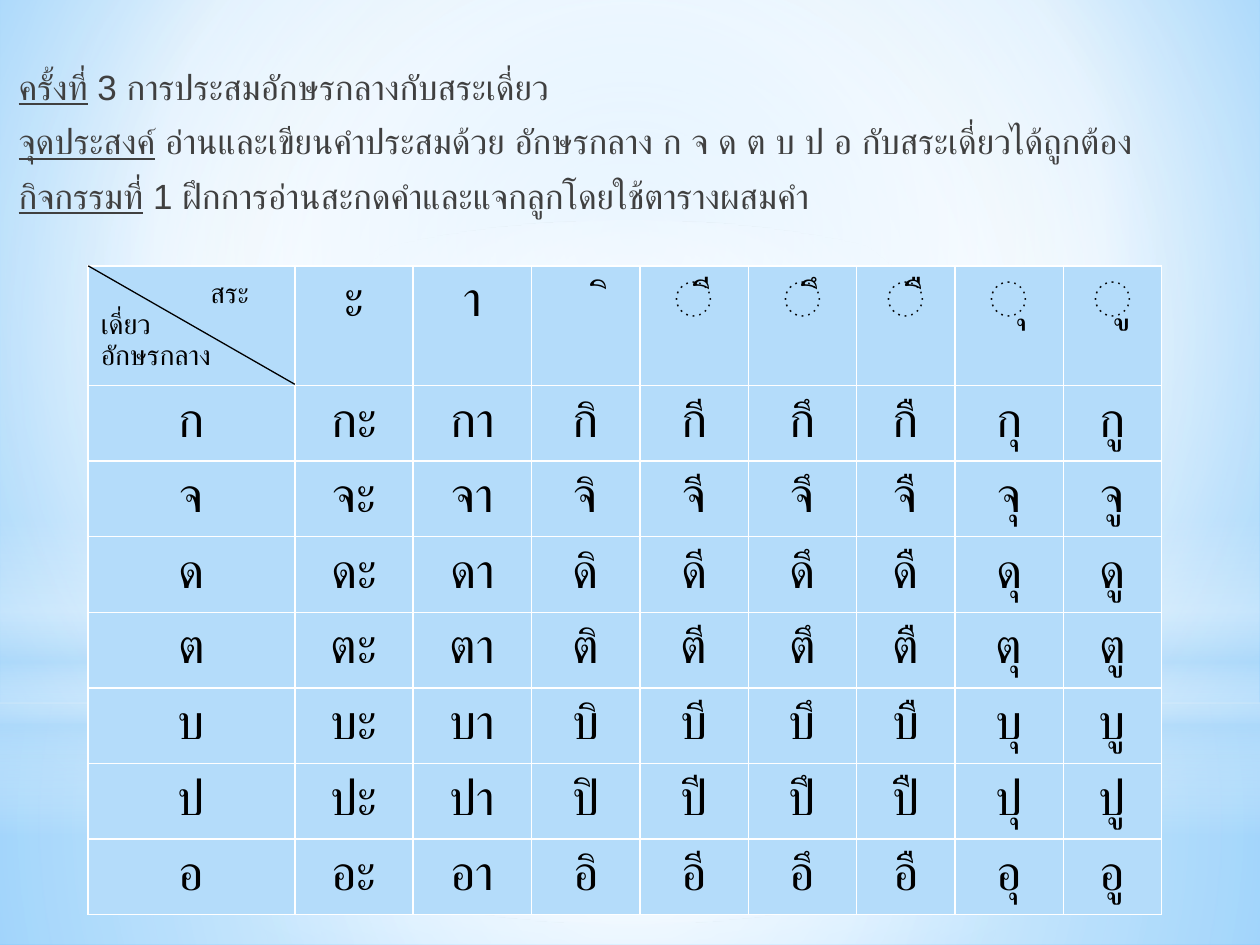
from lxml.etree import SubElement as add_node
from pptx import Presentation
from pptx.dml.color import RGBColor
from pptx.enum.shapes import MSO_CONNECTOR as Connector, MSO_SHAPE as Shape
from pptx.enum.text import PP_ALIGN as Align
from pptx.oxml.ns import qn
from pptx.util import Inches, Pt

WIDTH, HEIGHT = Inches(10), Inches(7.5)
WHITE = RGBColor(0xFF, 0xFF, 0xFF)
BLACK = RGBColor(0, 0, 0)
GREY = RGBColor(0x40, 0x40, 0x40)
PALE = RGBColor(0xB4, 0xDC, 0xFA)
SKY = RGBColor(0x9E, 0xD5, 0xFF)
DEEP = RGBColor(0x5B, 0xB9, 0xFF)

CENTRE = (50, 50, 50, 50)
LAYERS = [
    (Shape.RECTANGLE, 0.744, 0.256, CENTRE,
     [(0, WHITE, 91), (37, WHITE, 76), (100, PALE, 79)]),
    (Shape.RECTANGLE, 0, 0.744, CENTRE,
     [(0, WHITE, 89), (48, WHITE, 62), (100, PALE, 79)]),
    (Shape.RECTANGLE, 0.55, 0.333, None,
     [(0, WHITE, 0), (29, WHITE, 30), (45, PALE, 40),
      (55, WHITE, 26), (65, PALE, 60), (100, WHITE, 0)]),
    (Shape.OVAL, 0.233, 0.744, CENTRE, [(0, WHITE, 100), (56, WHITE, 0)]),
]
INTRO = [
    ("ครั้งที่", " 3 การประสมอักษรกลางกับสระเดี่ยว"),
    ("จุดประสงค์", " อ่านและเขียนคำประสมด้วย อักษรกลาง ก จ ด ต บ ป อ กับสระเดี่ยวได้ถูกต้อง"),
    ("กิจกรรมที่", " 1 ฝึกการอ่านสะกดคำและแจกลูกโดยใช้ตารางผสมคำ"),
]
CONSONANTS = "กจดตบปอ"
VOWELS = "ะาิีึืุู"
SHORT_I = "ิ"
COLUMNS = [1.64, 0.94, 0.94, 0.86, 0.86, 0.86, 0.78, 0.86, 0.78]
ROWS = [0.94] + [0.6] * len(CONSONANTS)
TABLE_LEFT, TABLE_TOP = Inches(0.7), Inches(2.11)


def paint_gradient(props, stops, focus):
    solid = props.find(qn("a:solidFill"))
    gradient = props.makeelement(qn("a:gradFill"), {"rotWithShape": "1"})
    stop_list = add_node(gradient, qn("a:gsLst"))
    for position, color, opacity in stops:
        stop = add_node(stop_list, qn("a:gs"), pos=str(position * 1000))
        tone = add_node(stop, qn("a:srgbClr"), val=str(color))
        add_node(tone, qn("a:alpha"), val=str(opacity * 1000))
    if focus:
        circle = add_node(gradient, qn("a:path"), {"path": "circle"})
        edges = {side: str(share * 1000) for side, share in zip("ltrb", focus)}
        add_node(circle, qn("a:fillToRect"), edges)
    else:
        add_node(gradient, qn("a:lin"), ang="5400000", scaled="0")
    props.replace(solid, gradient)


def paint_background(page):
    page.background.fill.solid()
    page.background.fill.fore_color.rgb = SKY
    props = page.element.find(".//" + qn("p:bgPr"))
    stops = [(0, SKY, 100), (60, WHITE, 100), (100, DEEP, 100)]
    paint_gradient(props, stops, (20, 10, 20, 60))


def add_layer(page, kind, top, height, focus, stops):
    layer = page.shapes.add_shape(kind, 0, int(HEIGHT * top), WIDTH, int(HEIGHT * height))
    layer.shadow.inherit = False
    layer.line.fill.background()
    layer.fill.solid()
    paint_gradient(layer.element.spPr, stops, focus)


def add_span(para, text, size, font, color, underline=False):
    span = para.add_run()
    span.text = text
    span.font.size = Pt(size)
    span.font.name = font
    span.font.color.rgb = color
    span.font.underline = underline
    add_node(span.font._element, qn("a:cs"), typeface=font)


def indent(para, left, first):
    props = para._p.get_or_add_pPr()
    props.set("marL", str(Inches(left)))
    props.set("indent", str(Inches(first)))


def add_intro(page):
    box = page.shapes.add_textbox(0, 0, WIDTH, HEIGHT)
    frame = box.text_frame
    frame.word_wrap = True
    frame.margin_top = Inches(0.52)
    for index, (label, text) in enumerate(INTRO):
        para = frame.paragraphs[0] if index == 0 else frame.add_paragraph()
        indent(para, 0.25, -0.2)
        para.space_before, para.space_after = Pt(4), Pt(3)
        add_span(para, label, 20, "Arial", GREY, True)
        add_span(para, text, 20, "Arial", GREY)


def style_cell(cell):
    props = cell._tc.get_or_add_tcPr()
    for side in ("lnL", "lnR", "lnT", "lnB"):
        border = add_node(props, qn("a:" + side), w=str(Pt(1)))
        add_node(add_node(border, qn("a:solidFill")), qn("a:srgbClr"), val=str(WHITE))
    cell.fill.solid()
    cell.fill.fore_color.rgb = PALE


def fill_corner(cell):
    cell.margin_top = Inches(0.1)
    para = cell.text_frame.paragraphs[0]
    indent(para, 0, 0.87)
    add_span(para, "สระเดี่ยว", 16, "Arial", BLACK)
    add_span(cell.text_frame.add_paragraph(), "อักษรกลาง", 16, "Arial", BLACK)


def fill_letter(cell, text, font):
    para = cell.text_frame.paragraphs[0]
    para.alignment = Align.CENTER
    if text == SHORT_I:
        cell.margin_left = Inches(0.4)
        text = " " + text
    add_span(para, text, 28, font, BLACK)


def add_syllables(page):
    frame = page.shapes.add_table(
        len(ROWS), len(COLUMNS), TABLE_LEFT, TABLE_TOP,
        Inches(sum(COLUMNS)), Inches(sum(ROWS)))
    table = frame.table
    table.first_row = table.horz_banding = False
    for column, width in zip(table.columns, COLUMNS):
        column.width = Inches(width)
    for row, height in zip(table.rows, ROWS):
        row.height = Inches(height)
    for row, consonant in enumerate(["", *CONSONANTS]):
        for column, vowel in enumerate(["", *VOWELS]):
            cell = table.cell(row, column)
            style_cell(cell)
            if row == column == 0:
                fill_corner(cell)
            else:
                fill_letter(cell, consonant + vowel, "Roboto" if row else "Arial")


def add_diagonal(page):
    line = page.shapes.add_connector(
        Connector.STRAIGHT, TABLE_LEFT, TABLE_TOP,
        TABLE_LEFT + Inches(COLUMNS[0]), TABLE_TOP + Inches(ROWS[0]))
    line.line.color.rgb = BLACK
    line.line.width = Pt(0.75)
    add_node(line._element.spPr, qn("a:effectLst"))


def main():
    deck = Presentation()
    deck.slide_width, deck.slide_height = WIDTH, HEIGHT
    page = deck.slides.add_slide(deck.slide_layouts[6])
    paint_background(page)
    for layer in LAYERS:
        add_layer(page, *layer)
    add_intro(page)
    add_syllables(page)
    add_diagonal(page)
    deck.save("out.pptx")


if __name__ == "__main__":
    main()
